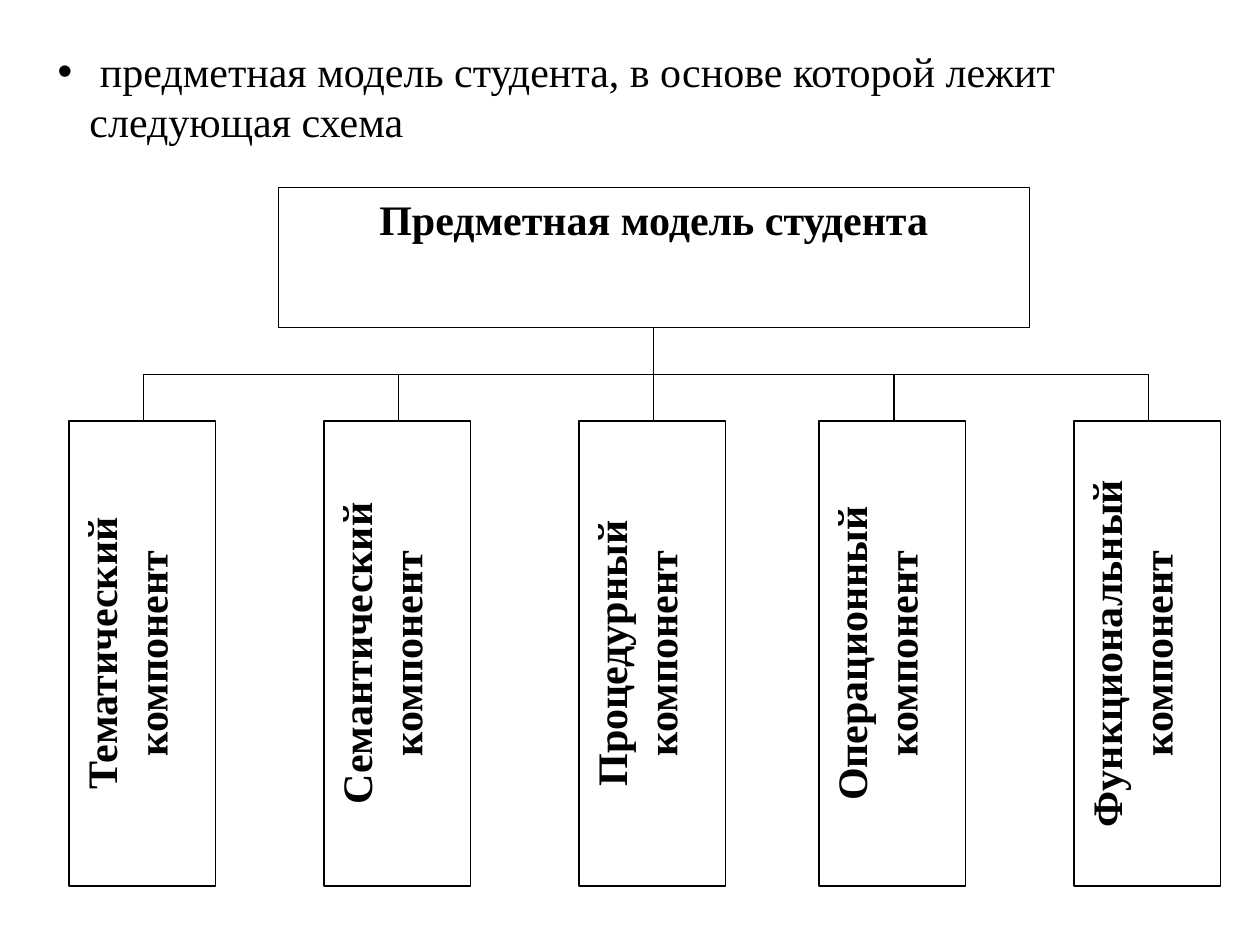
from dataclasses import dataclass

from lxml import etree
from pptx import Presentation
from pptx import util as u
from pptx.dml.color import RGBColor
from pptx.enum import shapes, text
from pptx.oxml.ns import qn
from pptx.util import Cm


@dataclass(frozen=True)
class Theme:
    font: str = "Times New Roman"
    size: u.Pt = u.Pt(24)
    ink: RGBColor = RGBColor(0, 0, 0)
    paper: RGBColor = RGBColor(255, 255, 255)
    line_width: u.Pt = u.Pt(0.75)


THEME = Theme()

COMPONENTS = [
    ["Тематический компонент"],
    ["Семантический", "компонент"],
    ["Процедурный", "компонент"],
    ["Операционный", "компонент"],
    ["Функциональный компонент"],
]
COLUMN_OFFSETS = [0, 5.14, 10.28, 15.12, 20.26]


def write_text(frame, paragraphs, bold=False, align=None, bullet=None):
    for index, content in enumerate(paragraphs):
        paragraph = frame.paragraphs[0] if index == 0 else frame.add_paragraph()
        paragraph.text = content
        paragraph.space_before = u.Pt(0)
        paragraph.alignment = align
        if bullet:
            properties = paragraph._p.get_or_add_pPr()
            properties.set("marL", str(Cm(0.76)))
            properties.set("indent", str(-Cm(0.64)))
            etree.SubElement(properties, qn("a:buChar"), char=bullet)
        paragraph.font.name = THEME.font
        paragraph.font.size = THEME.size
        paragraph.font.bold = bold
        paragraph.font.color.rgb = THEME.ink


def add_statement(slide, left, top, width, height):
    body = slide.placeholders[1]
    body.left, body.top, body.width, body.height = left, top, width, height
    frame = body.text_frame
    frame.word_wrap = True
    frame.auto_size = text.MSO_AUTO_SIZE.SHAPE_TO_FIT_TEXT
    write_text(
        frame,
        [" предметная модель студента, в основе которой лежит следующая схема"],
        bullet="•",
    )


def add_box(group, paragraphs, left, top, width, height, vertical=False):
    shape = group.shapes.add_shape(
        shapes.MSO_SHAPE.RECTANGLE, left, top, width, height
    )
    shape.shadow.inherit = False
    shape.fill.solid()
    shape.fill.fore_color.rgb = THEME.paper
    shape.line.color.rgb = THEME.ink
    shape.line.width = THEME.line_width
    frame = shape.text_frame
    frame.word_wrap = True
    frame.vertical_anchor = text.MSO_ANCHOR.TOP
    if vertical:
        frame._txBody.bodyPr.set("vert", "vert270")
    write_text(frame, paragraphs, bold=True, align=text.PP_ALIGN.CENTER)


def add_line(group, x1, y1, x2, y2):
    connector = group.shapes.add_connector(
        shapes.MSO_CONNECTOR.STRAIGHT, x1, y1, x2, y2
    )
    connector.line.color.rgb = THEME.ink
    connector.line.width = THEME.line_width
    etree.SubElement(connector._element.spPr, qn("a:effectLst"))


def add_model_tree(slide, left, top, width, height):
    """Draw the model box, its component columns and the lines joining them."""
    group = slide.shapes.add_group_shape()
    root_height, column_width, column_height = Cm(2.82), Cm(2.95), Cm(9.37)
    column_top = top + height - column_height
    root_bottom = top + root_height
    bus = (root_bottom + column_top) // 2

    add_box(group, ["Предметная модель студента"],
            left + Cm(4.22), top, Cm(15.14), root_height)

    column_lefts = [left + Cm(offset) for offset in COLUMN_OFFSETS]
    stems = [column_left + Cm(1.51) for column_left in column_lefts]
    for column_left, paragraphs in zip(column_lefts, COMPONENTS):
        add_box(group, paragraphs, column_left, column_top,
                column_width, column_height, vertical=True)

    middle = len(stems) // 2
    add_line(group, stems[0], bus, stems[-1], bus)
    for index, stem in enumerate(stems):
        stem_top = root_bottom if index == middle else bus
        add_line(group, stem, column_top, stem, stem_top)


def main():
    presentation = Presentation()
    presentation.slide_width, presentation.slide_height = Cm(25.4), Cm(19.05)
    slide = presentation.slides.add_slide(presentation.slide_layouts[1])
    title = slide.shapes.title._element
    title.getparent().remove(title)
    add_statement(slide, Cm(0.79), Cm(0.79), Cm(24.08), Cm(2.31))
    add_model_tree(slide, Cm(1.39), Cm(3.78), Cm(23.21), Cm(14.08))
    presentation.save("out.pptx")


if __name__ == "__main__":
    main()
